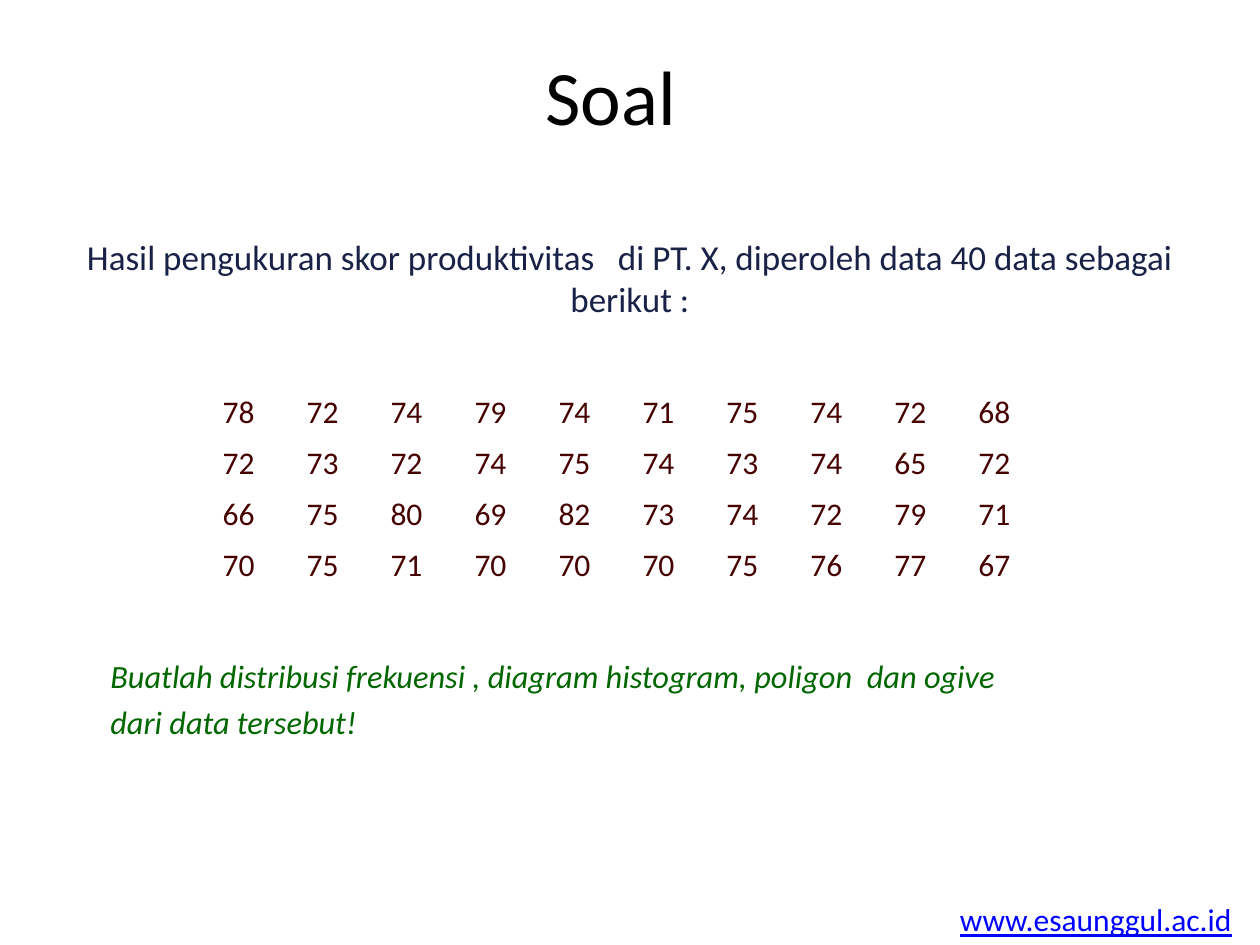
from pptx import Presentation
from pptx.dml.color import RGBColor
from pptx.enum.text import MSO_ANCHOR, PP_ALIGN
from pptx.util import Pt

FONT = "Calibri"
BLACK = RGBColor(0x00, 0x00, 0x00)
NAVY = RGBColor(0x1A, 0x21, 0x46)
MAROON = RGBColor(0x46, 0x00, 0x00)
GREEN = RGBColor(0x00, 0x66, 0x00)
LINK_BLUE = RGBColor(0x00, 0x00, 0xFF)

SCORES = [
    [78, 72, 74, 79, 74, 71, 75, 74, 72, 68],
    [72, 73, 72, 74, 75, 74, 73, 74, 65, 72],
    [66, 75, 80, 69, 82, 73, 74, 72, 79, 71],
    [70, 75, 71, 70, 70, 70, 75, 76, 77, 67],
]
COLUMN_WIDTH = 48
ROW_HEIGHT = 29.2


def add_run(paragraph, text, size, color, italic=False, underline=False):
    run = paragraph.add_run()
    run.text = text
    font = run.font
    font.name = FONT
    font.size = Pt(size)
    font.color.rgb = color
    font.italic = italic
    font.underline = underline


def add_text(slide, box, lines, size, color, align=PP_ALIGN.LEFT,
             space_before=0, wrap=True, **style):
    """Add a top-anchored text box, one paragraph per line."""
    shape = slide.shapes.add_textbox(*map(Pt, box))
    frame = shape.text_frame
    frame.word_wrap = wrap
    frame.vertical_anchor = MSO_ANCHOR.TOP
    for index, line in enumerate(lines):
        paragraph = frame.add_paragraph() if index else frame.paragraphs[0]
        paragraph.alignment = align
        if index:
            paragraph.space_before = Pt(space_before)
        add_run(paragraph, line, size, color, **style)


def add_score_table(slide, left, top):
    row_count, column_count = len(SCORES), len(SCORES[0])
    table = slide.shapes.add_table(
        row_count, column_count, Pt(left), Pt(top),
        Pt(column_count * COLUMN_WIDTH), Pt(row_count * ROW_HEIGHT)).table
    table.first_row = False
    table.horz_banding = False
    for column in table.columns:
        column.width = Pt(COLUMN_WIDTH)
    for row, scores in zip(table.rows, SCORES):
        row.height = Pt(ROW_HEIGHT)
        for cell, score in zip(row.cells, scores):
            cell.fill.background()
            add_run(cell.text_frame.paragraphs[0], str(score), 18, MAROON)


def main():
    presentation = Presentation()
    presentation.slide_width = Pt(720)
    presentation.slide_height = Pt(540)
    slide = presentation.slides.add_slide(presentation.slide_layouts[6])

    add_text(slide, (541.5, 511, 171.5, 29), ["www.esaunggul.ac.id"],
             18, LINK_BLUE, wrap=False, underline=True)
    add_text(slide, (48, 24, 612, 90), ["Soal "], 44, BLACK, PP_ALIGN.CENTER)
    add_text(slide, (36, 131, 648, 66),
             ["Hasil pengukuran skor produktivitas   di PT. X, "
              "diperoleh data 40 data sebagai berikut :"],
             20, NAVY, PP_ALIGN.CENTER)
    add_score_table(slide, 120, 221)
    add_text(slide, (56, 371.5, 540, 53.5),
             ["Buatlah distribusi frekuensi , diagram histogram, poligon  dan ogive",
              "dari data tersebut!"],
             18.5, GREEN, space_before=3.7, italic=True)

    presentation.save("out.pptx")


if __name__ == "__main__":
    main()
